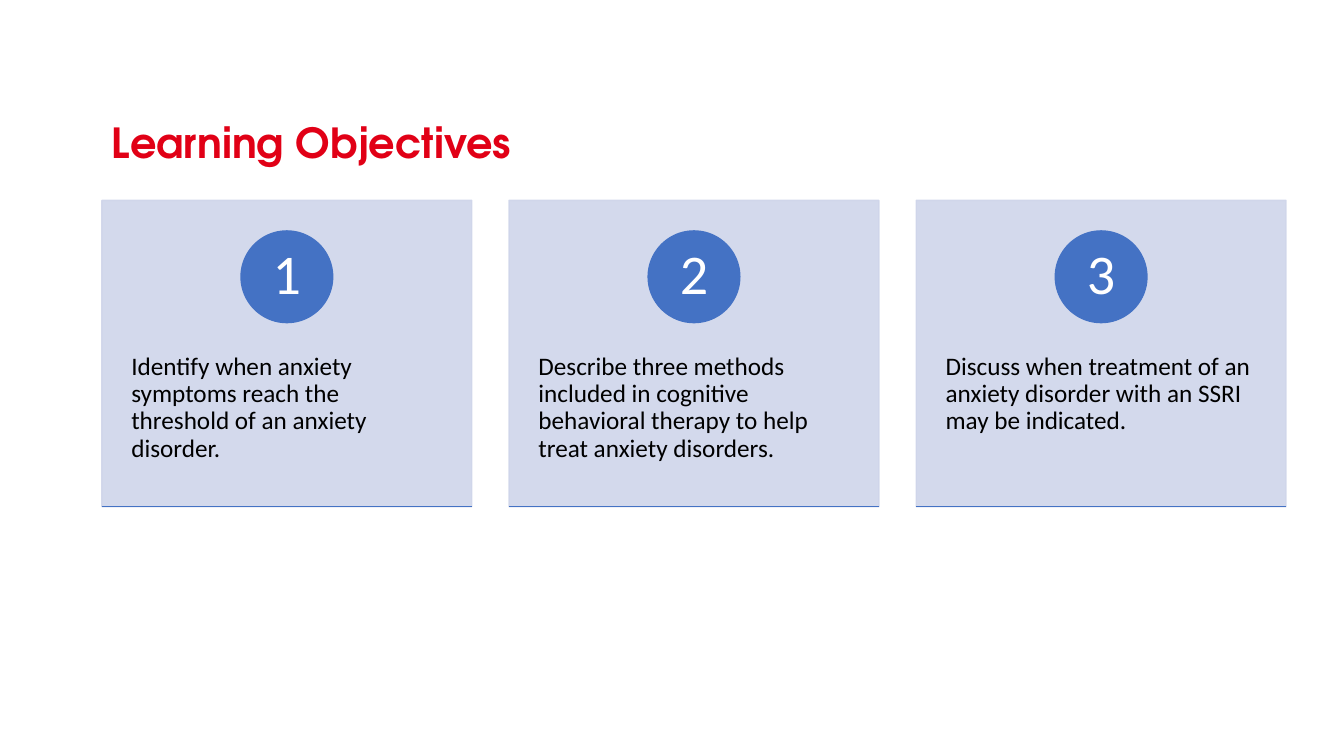
from dataclasses import dataclass

from lxml import etree
from pptx import Presentation
from pptx.dml.color import RGBColor
from pptx.enum import shapes, text
from pptx.oxml.ns import qn
from pptx.util import Cm, Pt

TITLE = "Learning Objectives"
OBJECTIVES = [
    "Identify when anxiety symptoms reach the threshold of an anxiety disorder.",
    "Describe three methods included in cognitive behavioral therapy to help treat anxiety disorders.",
    "Discuss when treatment of an anxiety disorder with an SSRI may be indicated.",
]


@dataclass(frozen=True)
class Theme:
    title_font: str = "TeX Gyre Adventor"
    body_font: str = "Calibri"
    title_size: float = 29.6
    body_size: float = 18
    number_size: float = 40
    red: str = "E10016"
    blue: str = "4472C4"
    card: str = "CFD5EA"
    black: str = "000000"
    white: str = "FFFFFF"
    card_opacity: int = 90


THEME = Theme()
LEFT, CARD_TOP = 2.57, 5.05
CARD_WIDTH, CARD_HEIGHT, CARD_PITCH = 9.32, 7.72, 10.26
CIRCLE_TOP, CIRCLE_SIZE = 5.82, 2.31
TEXT_TOP, TEXT_HEIGHT = 8.0, 4.65


def write(shape, words, font, size, color, spacing, align, anchor, insets, bold=False):
    """Fill a shape with one formatted paragraph; insets are (side, top and bottom) in cm."""
    frame = shape.text_frame
    frame.text = words
    frame.word_wrap = True
    frame.auto_size = text.MSO_AUTO_SIZE.NONE
    frame.vertical_anchor = anchor
    frame.margin_left = frame.margin_right = Cm(insets[0])
    frame.margin_top = frame.margin_bottom = Cm(insets[1])
    paragraph = frame.paragraphs[0]
    paragraph.alignment = align
    paragraph.line_spacing = spacing
    paragraph.space_before = Pt(0)
    paragraph.font.name = font
    paragraph.font.size = Pt(size)
    paragraph.font.bold = bold
    paragraph.font.color.rgb = RGBColor.from_string(color)


def add_filled_shape(slide, preset, left, top, width, height, color, opacity=100):
    shape = slide.shapes.add_shape(preset, Cm(left), Cm(top), Cm(width), Cm(height))
    shape.shadow.inherit = False
    shape.fill.solid()
    shape.line.width = Pt(1)
    for fill in (shape.fill, shape.line):
        (fill.fore_color if fill is shape.fill else fill.color).rgb = RGBColor.from_string(color)
    if opacity < 100:
        for rgb in shape.element.spPr.iter(qn("a:srgbClr")):
            etree.SubElement(rgb, qn("a:alpha"), val=str(opacity * 1000))
    return shape


def add_card(slide, number, objective):
    left = LEFT + (number - 1) * CARD_PITCH
    add_filled_shape(slide, shapes.MSO_SHAPE.RECTANGLE, left, CARD_TOP,
                     CARD_WIDTH, CARD_HEIGHT, THEME.card, THEME.card_opacity)

    description = slide.shapes.add_textbox(Cm(left), Cm(TEXT_TOP), Cm(CARD_WIDTH), Cm(TEXT_HEIGHT))
    write(description, objective, THEME.body_font, THEME.body_size, THEME.black, 0.9,
          text.PP_ALIGN.LEFT, text.MSO_ANCHOR.TOP, (0.74, 0.91))

    circle = add_filled_shape(slide, shapes.MSO_SHAPE.OVAL, left + (CARD_WIDTH - CIRCLE_SIZE) / 2,
                              CIRCLE_TOP, CIRCLE_SIZE, CIRCLE_SIZE, THEME.blue)
    write(circle, str(number), THEME.body_font, THEME.number_size, THEME.white, 0.9,
          text.PP_ALIGN.CENTER, text.MSO_ANCHOR.MIDDLE, (0.18, 0.03))

    bottom = Cm(CARD_TOP + CARD_HEIGHT)
    underline = slide.shapes.add_connector(shapes.MSO_CONNECTOR.STRAIGHT, Cm(left), bottom,
                                           Cm(left + CARD_WIDTH), bottom)
    underline.line.width = Pt(1)
    underline.line.color.rgb = RGBColor.from_string(THEME.blue)
    etree.SubElement(underline.element.spPr, qn("a:effectLst"))


def main():
    presentation = Presentation()
    presentation.slide_width, presentation.slide_height = Cm(33.87), Cm(19.05)
    slide = presentation.slides.add_slide(presentation.slide_layouts.get_by_name("Title Only"))

    title = slide.shapes.title
    title.left, title.top = Cm(LEFT), Cm(3.07)
    title.width, title.height = Cm(2 * CARD_PITCH + CARD_WIDTH), Cm(1.37)
    write(title, TITLE, THEME.title_font, THEME.title_size, THEME.red, 0.8,
          text.PP_ALIGN.LEFT, text.MSO_ANCHOR.TOP, (0.25, 0.13), bold=True)

    for number, objective in enumerate(OBJECTIVES, start=1):
        add_card(slide, number, objective)
    presentation.save("out.pptx")


if __name__ == "__main__":
    main()
